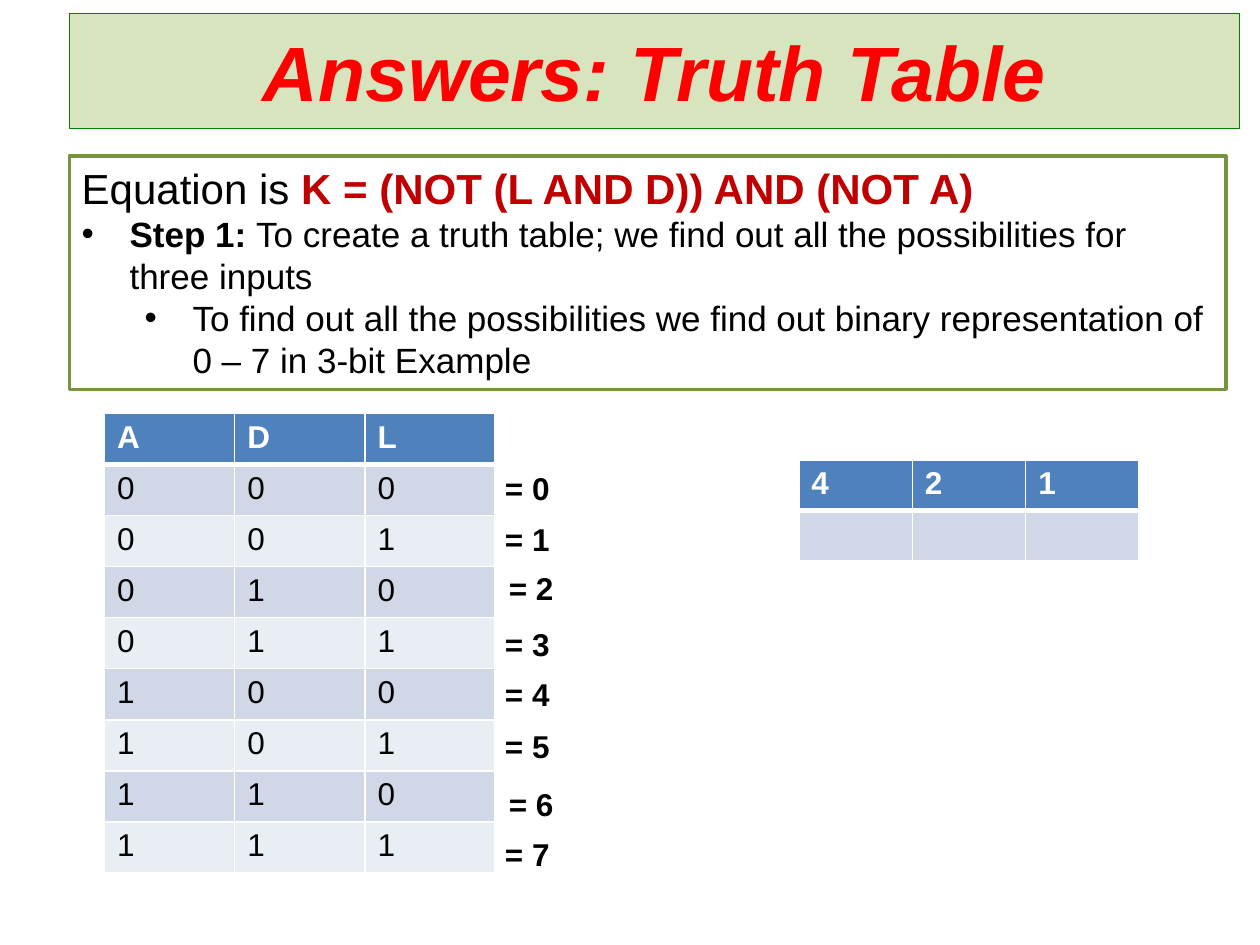
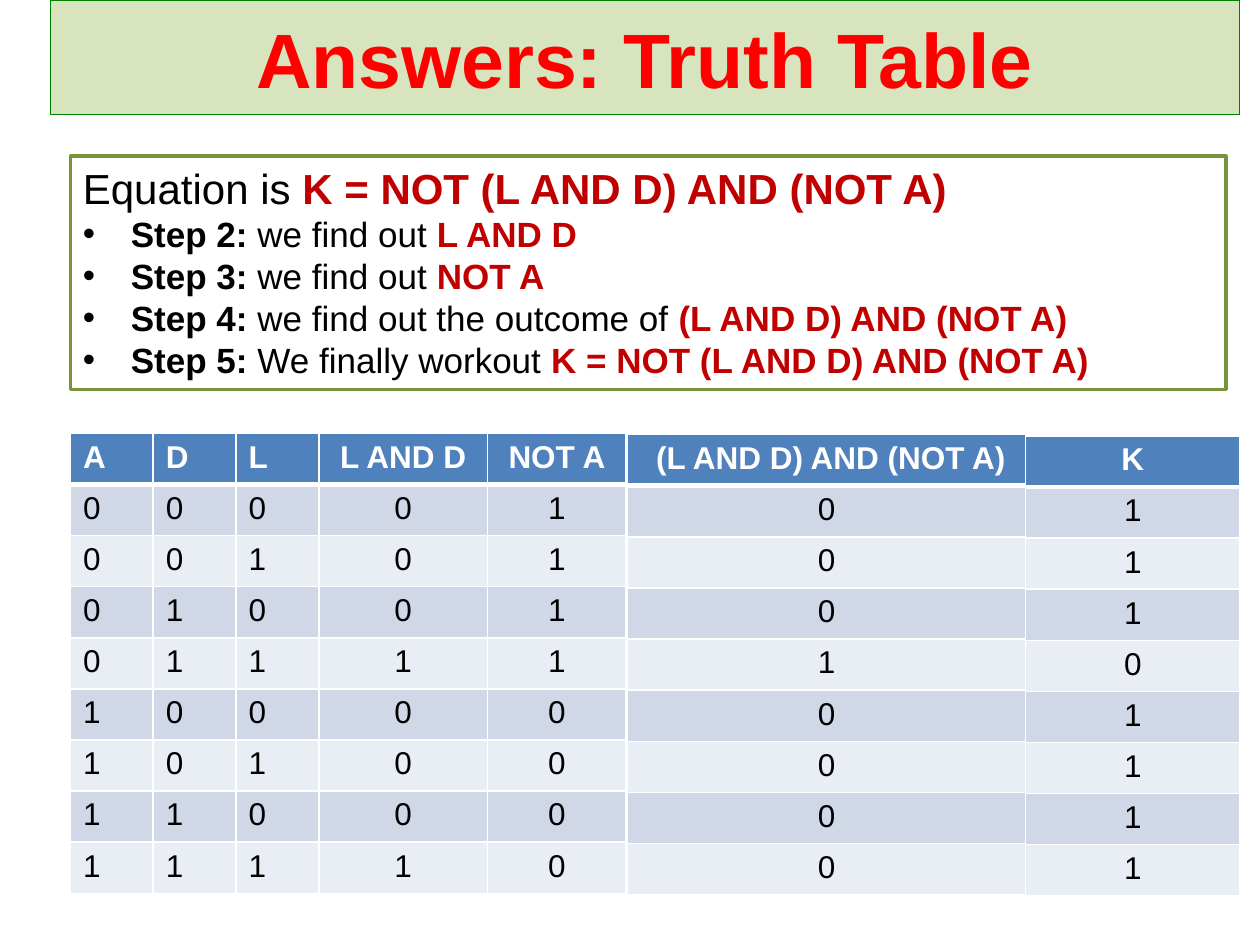
"""Build two slides that work out a truth table for K = NOT (L AND D) AND (NOT A)."""
from dataclasses import dataclass
from itertools import product
from typing import NamedTuple

from lxml import etree
from pptx import Presentation
from pptx.dml.color import RGBColor
from pptx.enum.shapes import MSO_SHAPE
from pptx.enum.text import MSO_ANCHOR, PP_ALIGN
from pptx.oxml.ns import qn
from pptx.util import Inches, Pt

RECTANGLE = MSO_SHAPE.RECTANGLE
MIDDLE, TOP = MSO_ANCHOR.MIDDLE, MSO_ANCHOR.TOP
CENTER, LEFT = PP_ALIGN.CENTER, PP_ALIGN.LEFT
FONT = "Arial"
COLORS = {
    "title": "FF0000", "title_fill": "D7E4BD", "title_line": "008000",
    "panel_line": "77933C", "text": "000000", "formula": "C00000",
    "white": "FFFFFF", "header": "4F81BD", "band_dark": "D0D8E8", "band_light": "E9EDF4",
}
INPUTS = list(product((0, 1), repeat=3))
TABLE_HEIGHT = 3.65
HANGING = 0.38


class Area(NamedTuple):
    """Position and size in inches."""
    left: float
    top: float
    width: float
    height: float

    def lengths(self) -> list:
        """Return the four values as lengths."""
        return [Inches(value) for value in self]


class Span(NamedTuple):
    """A piece of text with its own weight and colour."""
    text: str
    bold: bool = False
    color: str = "text"


@dataclass
class Line:
    """One paragraph of the explanation panel; level 0 has no bullet."""
    spans: list
    size: int = 20
    level: int = 1


@dataclass
class Grid:
    """A table with one header row above its values."""
    area: Area
    headers: list
    rows: list
    align: PP_ALIGN = CENTER


@dataclass
class Label:
    """The decimal value written beside a row."""
    value: int
    left: float
    top: float


def rgb(name: str) -> RGBColor:
    """Look up a named colour."""
    return RGBColor.from_string(COLORS[name])


def set_font(paragraph, size: float, color: str, bold=None) -> None:
    """Set the font that all runs of a paragraph share."""
    font = paragraph.font
    font.name, font.size, font.bold = FONT, Pt(size), bold
    font.color.rgb = rgb(color)


def add_box(page, area: Area, line: str, weight: float, fill: str = ""):
    """Draw an outlined rectangle and return its text frame."""
    box = page.shapes.add_shape(RECTANGLE, *area.lengths())
    box.shadow.inherit = False
    if fill:
        box.fill.solid()
        box.fill.fore_color.rgb = rgb(fill)
    else:
        box.fill.background()
    box.line.color.rgb = rgb(line)
    box.line.width = Pt(weight)
    box.text_frame.word_wrap = True
    return box.text_frame


def add_title(page, area: Area, italic: bool = False) -> None:
    """Draw the title band."""
    frame = add_box(page, area, "title_line", 0.75, "title_fill")
    frame.vertical_anchor = MIDDLE
    paragraph = frame.paragraphs[0]
    paragraph.text = "Answers: Truth Table"
    paragraph.alignment = CENTER
    set_font(paragraph, 44, "title", True)
    paragraph.font.italic = italic


def add_bullet(paragraph, level: int) -> None:
    """Give a paragraph a hanging bullet."""
    paragraph.level = level - 1
    properties = paragraph._p.get_or_add_pPr()
    properties.set("marL", str(Inches(HANGING + 0.5 * (level - 1))))
    properties.set("indent", str(Inches(-HANGING)))
    etree.SubElement(properties, qn("a:buFont"), typeface=FONT)
    etree.SubElement(properties, qn("a:buChar"), char="•")


def add_panel(page, area: Area, lines: list) -> None:
    """Draw the explanation panel with its mixed text."""
    frame = add_box(page, area, "panel_line", 2)
    frame.vertical_anchor = TOP
    for index, line in enumerate(lines):
        paragraph = frame.add_paragraph() if index else frame.paragraphs[0]
        paragraph.alignment = LEFT
        if line.level:
            add_bullet(paragraph, line.level)
        set_font(paragraph, line.size, "text")
        for span in line.spans:
            run = paragraph.add_run()
            run.text = span.text
            run.font.bold = span.bold
            run.font.color.rgb = rgb(span.color)


def add_borders(cell, top: float, bottom: float) -> None:
    """Draw white borders on the four sides of a cell."""
    properties = cell._tc.get_or_add_tcPr()
    for side, weight in {"L": 1, "R": 1, "T": top, "B": bottom}.items():
        border = etree.SubElement(properties, qn(f"a:ln{side}"), w=str(Pt(weight)))
        fill = etree.SubElement(border, qn("a:solidFill"))
        etree.SubElement(fill, qn("a:srgbClr"), val=COLORS["white"])


def add_grid(page, grid: Grid) -> None:
    """Draw a table with a header and banded rows."""
    values = [grid.headers, *grid.rows]
    frame = page.shapes.add_table(len(values), len(grid.headers), *grid.area.lengths())
    for row, texts in enumerate(values):
        header = row == 0
        band = "header" if header else "band_dark" if row % 2 else "band_light"
        for column, text in enumerate(texts):
            cell = frame.table.cell(row, column)
            add_borders(cell, 3 if row == 1 else 1, 3 if header else 1)
            cell.fill.solid()
            cell.fill.fore_color.rgb = rgb(band)
            paragraph = cell.text_frame.paragraphs[0]
            paragraph.text = str(text)
            paragraph.alignment = grid.align
            set_font(paragraph, 18, "white" if header else "text", header)


def add_label(page, label: Label) -> None:
    """Write the decimal value of a row."""
    box = page.shapes.add_textbox(*Area(label.left, label.top, 0.84, 0.4).lengths())
    box.text_frame.word_wrap = True
    paragraph = box.text_frame.paragraphs[0]
    paragraph.text = f"= {label.value}"
    set_font(paragraph, 18, "text", True)


def equation(formula: str) -> Line:
    """Return the opening line of a panel."""
    return Line([Span("Equation is "), Span(formula, True, "formula")], 24, 0)


def step(number: int, text: str, formula: str = "") -> Line:
    """Return a numbered step, ending in a formula if there is one."""
    spans = [Span(f"Step {number}: ", True), Span(text)]
    if formula:
        spans.append(Span(formula, True, "formula"))
    return Line(spans)


def add_inputs(page, left: float, top: float, width: float) -> None:
    """Draw the table of all input combinations."""
    area = Area(left, top, width, TABLE_HEIGHT)
    add_grid(page, Grid(area, ["A", "D", "L"], INPUTS, LEFT))


def build_possibilities(page) -> None:
    """Fill the slide that lists all inputs."""
    add_title(page, Area(0.55, 0.11, 9.29, 0.91), True)
    add_panel(page, Area(0.55, 1.24, 9.18, 1.85), [
        equation("K = (NOT (L AND D)) AND (NOT A)"),
        step(1, "To create a truth table; we find out all the possibilities for three inputs"),
        Line([Span("To find out all the possibilities we find out binary "
                   "representation of 0 – 7 in 3-bit Example")], level=2),
    ])
    add_inputs(page, 0.83, 3.28, 3.1)
    for value, top in enumerate((3.67, 4.08, 4.47, 4.91, 5.31, 5.72, 6.18, 6.58)):
        add_label(page, Label(value, 3.94 if value in (2, 6) else 3.91, top))
    add_grid(page, Grid(Area(6.34, 3.65, 2.7, 0.8), [4, 2, 1], [[""] * 3], LEFT))


def build_outcomes(page) -> None:
    """Fill the slide that works out every column."""
    full = "K = NOT (L AND D) AND (NOT A)"
    both = "(L AND D) AND (NOT A)"
    add_title(page, Area(0.4, 0, 9.44, 0.91))
    add_panel(page, Area(0.56, 1.24, 9.17, 1.85), [
        equation(full),
        step(2, "we find out ", "L AND D"),
        step(3, "we find out ", "NOT A"),
        step(4, "we find out the outcome of ", both),
        step(5, "We finally workout ", full),
    ])
    add_inputs(page, 0.56, 3.44, 1.97)
    l_and_d = [l & d for a, d, l in INPUTS]
    not_a = [1 - a for a, d, l in INPUTS]
    joined = [first & second for first, second in zip(l_and_d, not_a)]
    outcome = [1 - value for value in joined]
    for left, top, width, header, values in (
        (2.53, 3.44, 1.34, "L AND D", l_and_d),
        (3.87, 3.44, 1.1, "NOT A", not_a),
        (4.98, 3.45, 3.16, f" {both}", joined),
        (8.14, 3.46, 1.7, "K", outcome),
    ):
        area = Area(left, top, width, TABLE_HEIGHT)
        add_grid(page, Grid(area, [header], [[value] for value in values]))


def main() -> None:
    """Build and save the deck."""
    deck = Presentation()
    deck.slide_width, deck.slide_height = Inches(10), Inches(7.5)
    for build in (build_possibilities, build_outcomes):
        build(deck.slides.add_slide(deck.slide_layouts[6]))
    deck.save("out.pptx")


if __name__ == "__main__":
    main()
